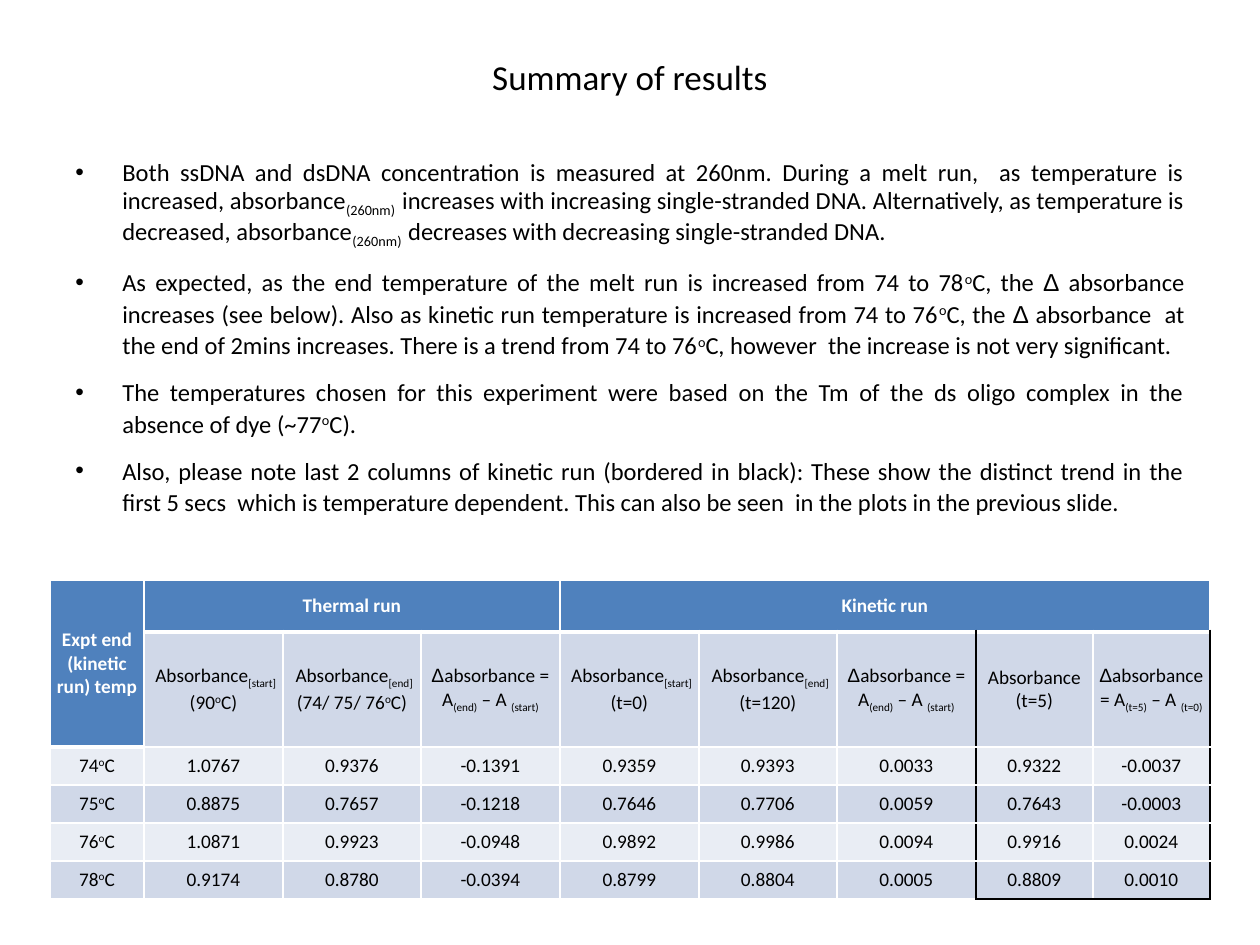
from dataclasses import dataclass

from lxml import etree
from pptx import Presentation
from pptx.dml.color import RGBColor
from pptx.enum.text import MSO_ANCHOR, PP_ALIGN
from pptx.oxml.ns import qn
from pptx.util import Emu, Pt

CENTER, JUSTIFY = PP_ALIGN.CENTER, PP_ALIGN.JUSTIFY
TOP, MIDDLE = MSO_ANCHOR.TOP, MSO_ANCHOR.MIDDLE
EMU_PER_PX = 914400 / 126
BASELINES = {"_": "-25000", "^": "30000"}


@dataclass(frozen=True)
class Theme:
    font: str = "Calibri"
    symbol_font: str = "Arial"
    title_size: int = 20
    body_size: int = 14
    table_size: int = 11
    black: str = "000000"
    white: str = "FFFFFF"
    header: str = "4F81BD"
    band_dark: str = "D0D8E8"
    band_light: str = "E9EDF4"


THEME = Theme()

BULLETS = [
    "Both ssDNA and dsDNA concentration is measured at 260nm. During a melt run,  as temperature is "
    "increased, absorbance|_(260nm)  |increases with increasing single-stranded DNA. Alternatively, "
    "as temperature is decreased, absorbance|_(260nm)  |decreases with decreasing single-stranded DNA.",
    "As expected, as the end temperature of the melt run is increased from 74 to 78|^o|C, the |Δ |"
    "absorbance increases (see below). Also as kinetic run temperature is increased from 74 to "
    "76|^o|C, the |Δ |absorbance  at the end of 2mins increases. There is a trend from 74 to "
    "76|^o|C, however  the increase is not very significant.",
    "The temperatures chosen for this experiment were based on the Tm of the ds oligo complex in the "
    "absence of dye (~77|^o|C).",
    "Also, please note last 2 columns of kinetic run (bordered in black): These show the distinct "
    "trend in the first 5 secs  which is temperature dependent. This can also be seen  in the plots "
    "in the previous slide.",
]

DELTA_END_START = "Δ|absorbance = A|_(end)| – A |_(start)"
TABLE_ROWS = [
    ["Expt end (kinetic run) temp", "Thermal run", "", "", "Kinetic run", "", "", "", ""],
    ["", " Absorbance|_[start]| (90|^o|C)", " Absorbance|_[end]| (74/ 75/ 76|^o|C)", DELTA_END_START,
     " Absorbance|_[start] |(t=0)", " Absorbance|_[end] |(t=120)", DELTA_END_START,
     "Absorbance (t=5)", "Δ|absorbance = A|_(t=5)| – A |_(t=0)"],
    ["74|^o|C", "1.0767", "0.9376", "-0.1391", "0.9359", "0.9393", "0.0033", "0.9322", "-0.0037"],
    ["75|^o|C", "0.8875", "0.7657", "-0.1218", "0.7646", "0.7706", "0.0059", "0.7643", "-0.0003"],
    ["76|^o|C", "1.0871", "0.9923", "-0.0948", "0.9892", "0.9986", "0.0094", "0.9916", "0.0024"],
    ["78|^o|C", "0.9174", "0.8780", "-0.0394", "0.8799", "0.8804", "0.0005", "0.8809", "0.0010"],
]
MERGES = [((0, 0), (1, 0)), ((0, 1), (0, 3)), ((0, 4), (0, 8))]
COLUMN_WIDTHS = [94] + [139, 138, 139] * 2 + [117] * 2
ROW_HEIGHTS = [52, 115] + [38] * 4
LAST_ROW, LAST_COLUMN, BOX_COLUMN = 5, 8, 7


def px(value):
    """Turn pixels into EMU."""
    return Emu(round(value * EMU_PER_PX))


def write_text(paragraph, text, size, color=THEME.black, bold=False, align=CENTER):
    """Write segments parted by |, where _ lowers and ^ raises a segment."""
    paragraph.alignment = align
    for segment in text.split("|"):
        baseline = BASELINES.get(segment[:1])
        run = paragraph.add_run()
        run.text = segment[1:] if baseline else segment
        run.font.name = THEME.symbol_font if segment.startswith("Δ") else THEME.font
        run.font.size = Pt(size)
        run.font.bold = bold
        run.font.color.rgb = RGBColor.from_string(color)
        if baseline:
            run._r.get_or_add_rPr().set("baseline", baseline)


def add_text_frame(slide, left, top, width, height, anchor):
    """Add a wrapping text box and return its text frame."""
    frame = slide.shapes.add_textbox(px(left), px(top), px(width), px(height)).text_frame
    frame.word_wrap = True
    frame.vertical_anchor = anchor
    return frame


def add_bullets(frame, texts):
    """Fill a text frame with justified bullet paragraphs."""
    for index, text in enumerate(texts):
        paragraph = frame.add_paragraph() if index else frame.paragraphs[0]
        write_text(paragraph, text, THEME.body_size, align=JUSTIFY)
        paragraph.line_spacing = Pt(18)
        paragraph.space_before = Pt(2.8)
        paragraph.space_after = Pt(6 if index < len(texts) - 1 else 0)
        properties = paragraph._p.get_or_add_pPr()
        properties.set("marL", str(px(47)))
        properties.set("indent", str(px(-47)))
        etree.SubElement(properties, qn("a:buFont"), typeface=THEME.symbol_font)
        etree.SubElement(properties, qn("a:buChar"), char="•")


def cell_borders(row, column):
    """Give colour and width in points for each side of a table cell."""
    is_header = row == 0 or (row == 1 and column == 0)
    in_box = row > 0 and column >= BOX_COLUMN
    black_sides = {
        "L": row > 0 and column == BOX_COLUMN,
        "R": row > 0 and column in (BOX_COLUMN - 1, LAST_COLUMN),
        "T": in_box and row == 1,
        "B": in_box and row == LAST_ROW,
    }
    return {
        side: (THEME.black if is_black else THEME.white, 3 if is_header and side == "B" else 1)
        for side, is_black in black_sides.items()
    }


def style_cell(cell, fill, borders):
    """Set the borders, fill, margins and anchor of a cell."""
    properties = cell._tc.get_or_add_tcPr()
    for side, (color, width) in borders.items():
        line = etree.SubElement(properties, qn(f"a:ln{side}"), w=str(Pt(width)))
        solid = etree.SubElement(line, qn("a:solidFill"))
        etree.SubElement(solid, qn("a:srgbClr"), val=color)
    cell.fill.solid()
    cell.fill.fore_color.rgb = RGBColor.from_string(fill)
    cell.margin_left = cell.margin_right = cell.margin_top = cell.margin_bottom = 0
    cell.vertical_anchor = MIDDLE


def add_results_table(slide, left, top):
    """Add the table of absorbance results."""
    table = slide.shapes.add_table(
        len(ROW_HEIGHTS), len(COLUMN_WIDTHS), px(left), px(top),
        px(sum(COLUMN_WIDTHS)), px(sum(ROW_HEIGHTS)),
    ).table
    for column, width in zip(table.columns, COLUMN_WIDTHS):
        column.width = px(width)
    for row, height in zip(table.rows, ROW_HEIGHTS):
        row.height = px(height)
    for start, end in MERGES:
        table.cell(*start).merge(table.cell(*end))
    for row, texts in enumerate(TABLE_ROWS):
        for column, text in enumerate(texts):
            cell = table.cell(row, column)
            is_header = row == 0 or (row == 1 and column == 0)
            band = THEME.band_dark if row % 2 else THEME.band_light
            style_cell(cell, THEME.header if is_header else band, cell_borders(row, column))
            if text:
                write_text(cell.text_frame.paragraphs[0], text, THEME.table_size,
                           color=THEME.white if is_header else THEME.black, bold=is_header)


def main():
    """Build the results slide and save it."""
    presentation = Presentation()
    presentation.slide_width, presentation.slide_height = px(1260), px(945)
    slide = presentation.slides.add_slide(presentation.slide_layouts[6])
    title = add_text_frame(slide, 63, -2, 1134, 157, MIDDLE)
    write_text(title.paragraphs[0], "Summary of results", THEME.title_size)
    add_bullets(add_text_frame(slide, 63, 149, 1134, 624, TOP), BULLETS)
    add_results_table(slide, 50, 580)
    presentation.save("out.pptx")


if __name__ == "__main__":
    main()
